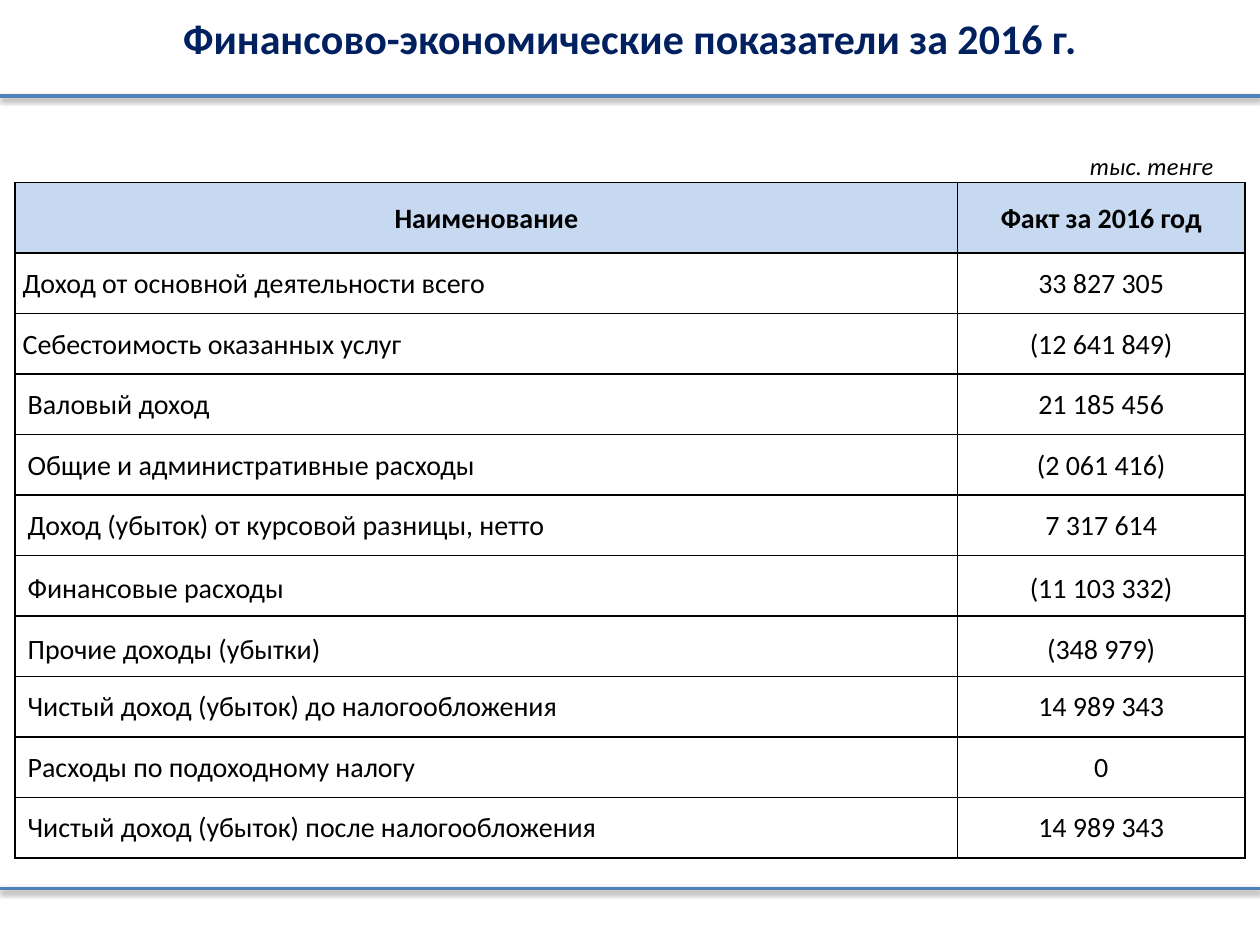
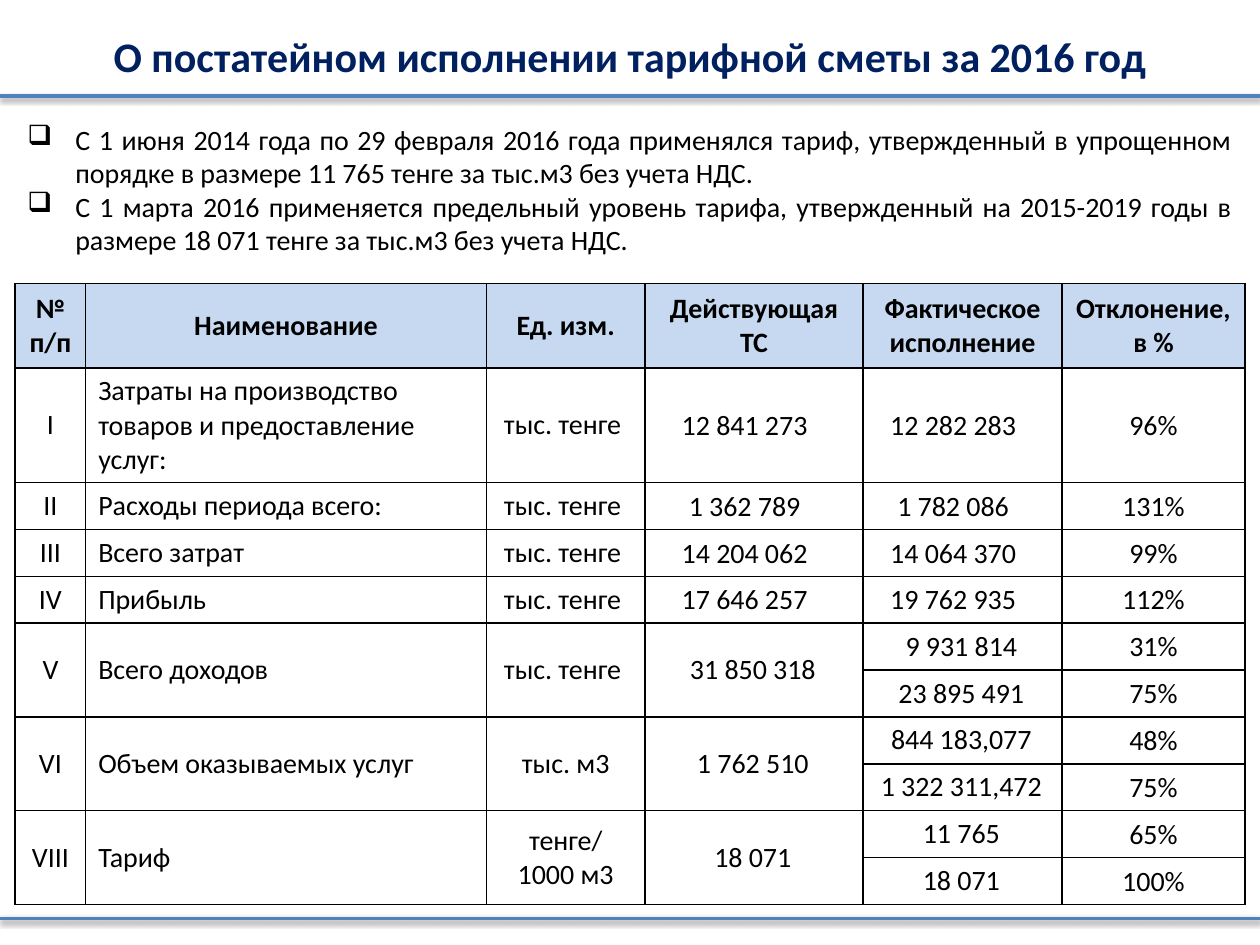
from dataclasses import dataclass
from lxml.etree import SubElement
from pptx import Presentation
from pptx.dml.color import RGBColor as Rgb
from pptx.enum.shapes import MSO_CONNECTOR as Connector
from pptx.enum.text import MSO_ANCHOR as Anchor, PP_ALIGN as Align
from pptx.oxml import parse_xml
from pptx.oxml.ns import nsdecls, qn
from pptx.util import Inches, Pt


@dataclass(frozen=True)
class Theme:
    """Colours, type and line sizes of both slides."""
    font: str = "Calibri"
    navy: str = "002060"
    blue: str = "4F81BD"
    header: str = "C6D9F1"
    black: str = "000000"
    title: int = 24
    body: int = 16
    note: int = 14
    rule: int = 2
    border: int = 1


THEME = Theme()
WIDTH, HEIGHT = 10, 7.5
MARGIN = 0.12
CONTENT_WIDTH = WIDTH - 2 * MARGIN
TOP_RULE = 0.76

PADDED = (0.1, 0.05, 0.1, 0.05)
TIGHT = (0.01, 0.01, 0.01, 0)
LABEL = (0.06, 0.01, 0.01, 0)
INDENTED = (0.1, 0.01, 0.01, 0)
UNIT = (0.1, 0.05, 0.15, 0.05)
AMOUNT = (0.01, 0.01, 0.16, 0)
SPLIT_AMOUNT = (0.1, 0.05, 0.12, 0.05)

INCOME = [
    ("Доход от основной деятельности всего", "33 827 305"),
    ("Себестоимость оказанных услуг", "(12 641 849)"),
    ("Валовый доход", "21 185 456"),
    ("Общие и административные расходы", "(2 061 416)"),
    ("Доход (убыток) от курсовой разницы, нетто", "7 317 614"),
    ("Финансовые расходы", "(11 103 332)"),
    ("Прочие доходы (убытки)", "(348 979)"),
    ("Чистый доход (убыток) до налогообложения", "14 989 343"),
    ("Расходы по подоходному налогу", "0"),
    ("Чистый доход (убыток) после налогообложения", "14 989 343"),
]
LOOSE_ROWS = ("Финансовые расходы", "Прочие доходы (убытки)")

TARIFF_NOTES = [
    "С 1 июня 2014 года по 29 февраля 2016 года применялся тариф, утвержденный в "
    "упрощенном порядке в размере 11 765 тенге за тыс.м3 без учета НДС.",
    "С 1 марта 2016 применяется предельный уровень тарифа, утвержденный на "
    "2015-2019 годы в размере 18 071 тенге за тыс.м3 без учета НДС.",
]
ESTIMATE_HEADER = ("№ п/п", "Наименование", "Ед. изм.", "Действующая ТС",
                   "Фактическое исполнение", "Отклонение, в %")
ESTIMATE = [
    ("I", "Затраты на производство товаров и предоставление услуг:", "тыс. тенге",
     "12 841 273", [("12 282 283", "96%")]),
    ("II", "Расходы периода всего:", "тыс. тенге", "1 362 789", [("1 782 086", "131%")]),
    ("III", "Всего затрат", "тыс. тенге", "14 204 062", [("14 064 370", "99%")]),
    ("IV", "Прибыль", "тыс. тенге", "17 646 257", [("19 762 935", "112%")]),
    ("V", "Всего доходов", "тыс. тенге", "31 850 318",
     [("9 931 814", "31%"), ("23 895 491", "75%")]),
    ("VI", "Объем оказываемых услуг", "тыс. м3", "1 762 510",
     [("844 183,077", "48%"), ("1 322 311,472", "75%")]),
    ("VIII", "Тариф", "тенге/\n1000 м3", "18 071",
     [("11 765", "65%"), ("18 071", "100%")]),
]


def apply_format(target, formats):
    """Set every attribute named in formats."""
    for attribute, value in formats.items():
        setattr(target, attribute, value)


def margins(insets):
    """Turn left, top, right and bottom insets into format values."""
    sides = ("left", "top", "right", "bottom")
    return {f"margin_{side}": Inches(inset) for side, inset in zip(sides, insets)}


def write(frame, text, size, color=THEME.black, align=Align.CENTER, spacing=None,
          bold=False, italic=False):
    """Fill a text frame and style each of its paragraphs."""
    frame.text = text
    for paragraph in frame.paragraphs:
        apply_format(paragraph, {"alignment": align, "line_spacing": spacing})
        for run in paragraph.runs:
            apply_format(run.font, {"name": THEME.font, "size": Pt(size),
                                    "bold": bold, "italic": italic})
            run.font.color.rgb = Rgb.from_string(color)


def add_text(slide, box, text, size, anchor=Anchor.TOP, **style):
    """Put a wrapped text in the box and return its frame."""
    frame = slide.shapes.add_textbox(*map(Inches, box)).text_frame
    apply_format(frame, {"word_wrap": True, "vertical_anchor": anchor, **margins(PADDED)})
    write(frame, text, size, **style)
    return frame


def add_title(slide, box, text, anchor):
    """Put the navy slide title in the box."""
    add_text(slide, box, text, THEME.title, anchor, color=THEME.navy, bold=True)


def add_rule(slide, top):
    """Draw a shadowed rule across the slide."""
    rule = slide.shapes.add_connector(
        Connector.STRAIGHT, 0, Inches(top), Inches(WIDTH), Inches(top))
    rule.line.color.rgb = Rgb.from_string(THEME.blue)
    rule.line.width = Pt(THEME.rule)
    rule._element.spPr.append(parse_xml(
        f'<a:effectLst {nsdecls("a")}><a:outerShdw blurRad="40000" dist="20000" '
        f'dir="5400000" rotWithShape="0"><a:srgbClr val="{THEME.black}">'
        '<a:alpha val="38000"/></a:srgbClr></a:outerShdw></a:effectLst>'))


def add_borders(cell):
    """Draw all four borders of a table cell."""
    properties = cell._tc.get_or_add_tcPr()
    for position, side in enumerate("LRTB"):
        properties.insert(position, parse_xml(
            f'<a:ln{side} {nsdecls("a")} w="{Pt(THEME.border)}"><a:solidFill>'
            f'<a:srgbClr val="{THEME.black}"/></a:solidFill></a:ln{side}>'))


def add_grid(slide, box, widths, heights):
    """Add a bordered table with a tinted header row to the box."""
    table = slide.shapes.add_table(len(heights), len(widths), *map(Inches, box)).table
    apply_format(table, {"first_row": False, "horz_banding": False})
    for column, width in zip(table.columns, widths):
        column.width = Inches(width)
    for index, (row, height) in enumerate(zip(table.rows, heights)):
        row.height = Inches(height)
        for cell in row.cells:
            if index == 0:
                cell.fill.solid()
                cell.fill.fore_color.rgb = Rgb.from_string(THEME.header)
            else:
                cell.fill.background()
            add_borders(cell)
    return table


def fill_cell(cell, text, insets, **style):
    """Write a vertically centred table cell."""
    apply_format(cell, {"vertical_anchor": Anchor.MIDDLE, **margins(insets)})
    write(cell.text_frame, text, THEME.body, **style)


def add_income_table(slide, box):
    """Fill the box with the income statement."""
    widths = (7.48, box[2] - 7.48)
    row_height = (box[3] - 0.56) / len(INCOME)
    table = add_grid(slide, box, widths, [0.56] + [row_height] * len(INCOME))
    for column, heading in enumerate(("Наименование", "Факт за 2016 год")):
        fill_cell(table.cell(0, column), heading, TIGHT, bold=True)
    for row, (item, amount) in enumerate(INCOME, 1):
        spacing = 1.15 if item in LOOSE_ROWS else None
        fill_cell(table.cell(row, 0), item, LABEL if row < 3 else INDENTED,
                  align=Align.LEFT, spacing=spacing)
        fill_cell(table.cell(row, 1), amount, TIGHT, spacing=spacing)


def add_estimate_table(slide, box):
    """Fill the box with the tariff estimate, merging items with two results."""
    line_count = sum(len(item[-1]) for item in ESTIMATE)
    line_height = (box[3] - 0.67 - 0.91) / (line_count - 1)
    table = add_grid(slide, box, (0.56, 3.18, 1.26, 1.73, 1.58, 1.45),
                     [0.67, 0.91] + [line_height] * (line_count - 1))
    for column, heading in enumerate(ESTIMATE_HEADER):
        fill_cell(table.cell(0, column), heading, PADDED, bold=True)
    row = 1
    for number, item, unit, plan, results in ESTIMATE:
        amount_insets = AMOUNT if len(results) == 1 else SPLIT_AMOUNT
        unit_insets = UNIT if unit == "тыс. тенге" else PADDED
        shared = ((number, PADDED, Align.CENTER), (item, PADDED, Align.LEFT),
                  (unit, unit_insets, Align.CENTER), (plan, amount_insets, Align.CENTER))
        for column, (text, insets, align) in enumerate(shared):
            first = table.cell(row, column)
            if len(results) > 1:
                first.merge(table.cell(row + len(results) - 1, column))
            fill_cell(first, text, insets, align=align)
        for actual, deviation in results:
            fill_cell(table.cell(row, 4), actual, amount_insets)
            fill_cell(table.cell(row, 5), deviation, TIGHT)
            row += 1


def add_notes_list(slide, box):
    """Put the justified, box-bulleted tariff notes in the box."""
    frame = add_text(slide, box, "\n".join(TARIFF_NOTES), THEME.body, align=Align.JUSTIFY)
    for paragraph in frame.paragraphs:
        properties = paragraph._p.get_or_add_pPr()
        properties.set("marL", str(Inches(0.38)))
        properties.set("indent", str(-Inches(0.38)))
        SubElement(properties, qn("a:buChar")).set("char", "❑")


def build_income_slide(slide):
    """Lay out the financial results slide."""
    add_title(slide, (0, 0.05, WIDTH, 0.5), "Финансово-экономические показатели за 2016 г.",
              Anchor.TOP)
    add_text(slide, (8.16, 1.15, 1.57, 0.34), "тыс. тенге", THEME.note,
             align=Align.RIGHT, italic=True)
    add_rule(slide, TOP_RULE)
    add_income_table(slide, (MARGIN, 1.45, CONTENT_WIDTH, 5.36))
    add_rule(slide, 7.05)


def build_estimate_slide(slide):
    """Lay out the tariff estimate slide."""
    add_title(slide, (0, 0.09, WIDTH, 0.71),
              "О постатейном исполнении тарифной сметы за 2016 год", Anchor.MIDDLE)
    add_notes_list(slide, (MARGIN, 0.92, CONTENT_WIDTH, 1.18))
    add_rule(slide, TOP_RULE)
    add_estimate_table(slide, (MARGIN, 2.25, CONTENT_WIDTH, 4.93))
    add_rule(slide, 7.29)


def main():
    """Build and save the presentation."""
    deck = Presentation()
    apply_format(deck, {"slide_width": Inches(WIDTH), "slide_height": Inches(HEIGHT)})
    for build in (build_income_slide, build_estimate_slide):
        build(deck.slides.add_slide(deck.slide_layouts[6]))
    deck.save("out.pptx")


if __name__ == "__main__":
    main()
